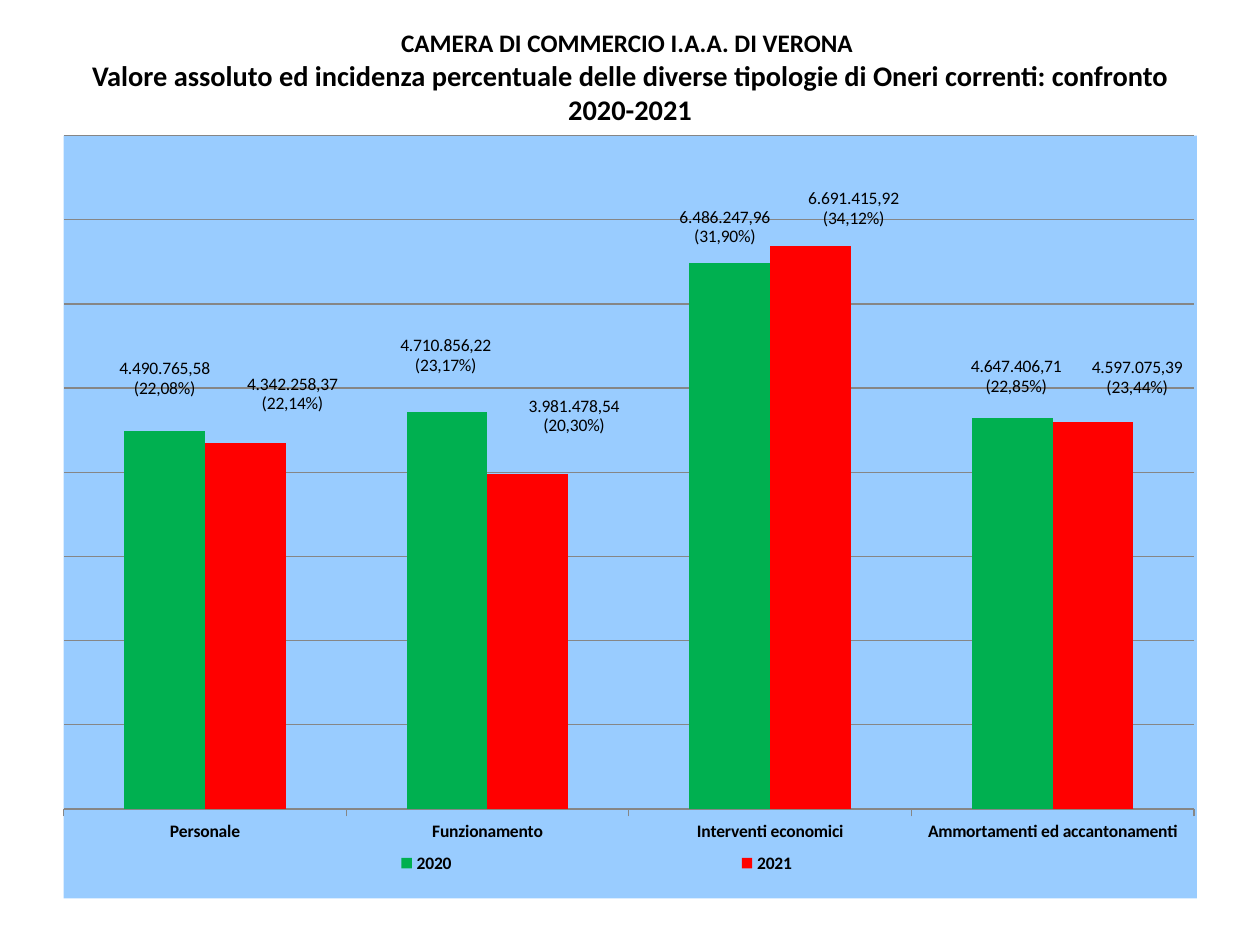
from lxml import etree
from pptx import Presentation
from pptx.chart.data import CategoryChartData
from pptx.dml.color import RGBColor
from pptx.enum import chart as ch, text
from pptx.oxml import parse_xml
from pptx.oxml.ns import nsdecls, qn
from pptx.util import Cm, Pt

COLORS = {"text": "000000", "background": "99CCFF", "grid": "868686",
          "2020": "00B050", "2021": "FF0000"}
CATEGORIES = ["Personale", "Funzionamento", "Interventi economici",
              "Ammortamenti ed accantonamenti"]
CHART_W, CHART_H = 22.86, 15.39
# year: (value in whole euros, amount shown, share shown, label shift in cm)
COSTS = {
    "2020": [(4490766, "4.490.765,58", "22,08%", 0, -0.56),
             (4710856, "4.710.856,22", "23,17%", -0.03, -0.65),
             (6486248, "6.486.247,96", "31,90%", -0.1, -0.23),
             (4647407, "4.647.406,71", "22,85%", 0.08, -0.33)],
    "2021": [(4342258, "4.342.258,37", "22,14%", 0.95, -0.5),
             (3981479, "3.981.478,54", "20,30%", 0.93, -0.67),
             (6691416, "6.691.415,92", "34,12%", 0.87, -0.25),
             (4597075, "4.597.075,39", "23,44%", 0.89, -0.4)],
}


def rgb(name):
    return RGBColor.from_string(COLORS[name])


def set_layout(parent, index, modes, **lengths):
    """Put a manual layout, with lengths in cm, at the given child index."""
    for old in parent.findall(qn("c:layout")):
        parent.remove(old)
    layout = etree.Element(qn("c:layout"))
    manual = etree.SubElement(layout, qn("c:manualLayout"))
    for tag, value in modes.items():
        etree.SubElement(manual, qn("c:" + tag)).set("val", value)
    for tag, length in lengths.items():
        whole = CHART_W if tag in "xw" else CHART_H
        etree.SubElement(manual, qn("c:" + tag)).set("val", str(length / whole))
    parent.insert(index, layout)


prs = Presentation()
prs.slide_width, prs.slide_height = Cm(25.4), Cm(19.05)
s = prs.slides.add_slide(prs.slide_layouts[5])

# Title
title = s.shapes.title
title.left, title.top, title.width, title.height = Cm(1.27), Cm(0.77), Cm(22.86), Cm(1.55)
tf = title.text_frame
tf.word_wrap = True
tf.auto_size = text.MSO_AUTO_SIZE.NONE
tf.vertical_anchor = text.MSO_ANCHOR.MIDDLE
p = tf.paragraphs[0]
p.alignment = text.PP_ALIGN.CENTER
p.font.name, p.font.bold = "Calibri", True
p.font.color.rgb = rgb("text")
r = p.add_run()
r.text, r.font.size = "CAMERA DI COMMERCIO I.A.A. DI VERONA ", Pt(14.4)
p.add_line_break()
r = p.add_run()
r.text = ("Valore assoluto ed incidenza percentuale delle diverse tipologie "
          "di Oneri correnti: confronto 2020-2021")
r.font.size = Pt(16.2)

# Chart
data = CategoryChartData(number_format="#,##0.00")
data.categories = CATEGORIES
for year, costs in COSTS.items():
    data.add_series(year, [cost[0] for cost in costs])
chart = s.shapes.add_chart(ch.XL_CHART_TYPE.COLUMN_CLUSTERED, Cm(1.27), Cm(2.72),
                           Cm(CHART_W), Cm(CHART_H), data).chart
chart.has_title = False
chart.font.name, chart.font.size = "Calibri", Pt(10)
chart.font.color.rgb = rgb("text")
chart_space = chart.element
chart_space.find(qn("c:chart")).addnext(parse_xml(
    f'<c:spPr {nsdecls("c", "a")}><a:solidFill><a:srgbClr val="{COLORS["background"]}"/>'
    '</a:solidFill><a:ln><a:noFill/></a:ln></c:spPr>'))
edges = {"xMode": "edge", "yMode": "edge"}
set_layout(chart_space.find(".//" + qn("c:plotArea")), 0,
           {"layoutTarget": "inner", **edges}, x=0, y=0, w=22.8, h=13.59)

# Axes
values = chart.value_axis
values.minimum_scale, values.maximum_scale, values.major_unit = 0, 8000000, 1000000
values.visible = False
values.has_major_gridlines = True
values.tick_labels.number_format = "#,##0.00"
values.tick_labels.number_format_is_linked = False
categories = chart.category_axis
categories.major_tick_mark = ch.XL_TICK_MARK.OUTSIDE
categories.tick_labels.font.bold = True
for line in (values.major_gridlines.format.line, categories.format.line):
    line.color.rgb = rgb("grid")
    line.width = Pt(0.75)

# Legend
chart.has_legend = True
chart.legend.position = ch.XL_LEGEND_POSITION.RIGHT
chart.legend.include_in_layout = False
chart.legend.font.bold = True
set_layout(chart_space.find(".//" + qn("c:legend")), 1, edges,
           x=1.07, y=14.22, w=19.36, h=0.92)

# Columns and their labels
plot = chart.plots[0]
plot.gap_width, plot.overlap = 150, 0
plot.vary_by_categories = False
for series in plot.series:
    series.format.fill.solid()
    series.format.fill.fore_color.rgb = rgb(series.name)
    series.invert_if_negative = False
    costs = COSTS[series.name]
    labels = series.data_labels
    labels.show_value = True
    labels.number_format, labels.number_format_is_linked = "#,##0.00", False
    labels.font.bold = True
    for i, (_, amount, share, _, _) in enumerate(costs):
        label = series.points[i].data_label
        label.text_frame.text = f"{amount}\n({share})"
        for p in label.text_frame.paragraphs:
            p.font.name, p.font.size, p.font.bold = "Calibri", Pt(10), False
            p.font.color.rgb = rgb("text")
        label.position = ch.XL_LABEL_POSITION.OUTSIDE_END
    dlbls = series._element.find(qn("c:dLbls"))
    for old in dlbls.findall(qn("c:showLeaderLines")):
        dlbls.remove(old)
    etree.SubElement(dlbls, qn("c:showLeaderLines")).set("val", "0")
    for dlbl, (_, _, _, dx, dy) in zip(dlbls.findall(qn("c:dLbl")), costs):
        set_layout(dlbl, 1, {}, x=dx, y=dy)

prs.save("out.pptx")
